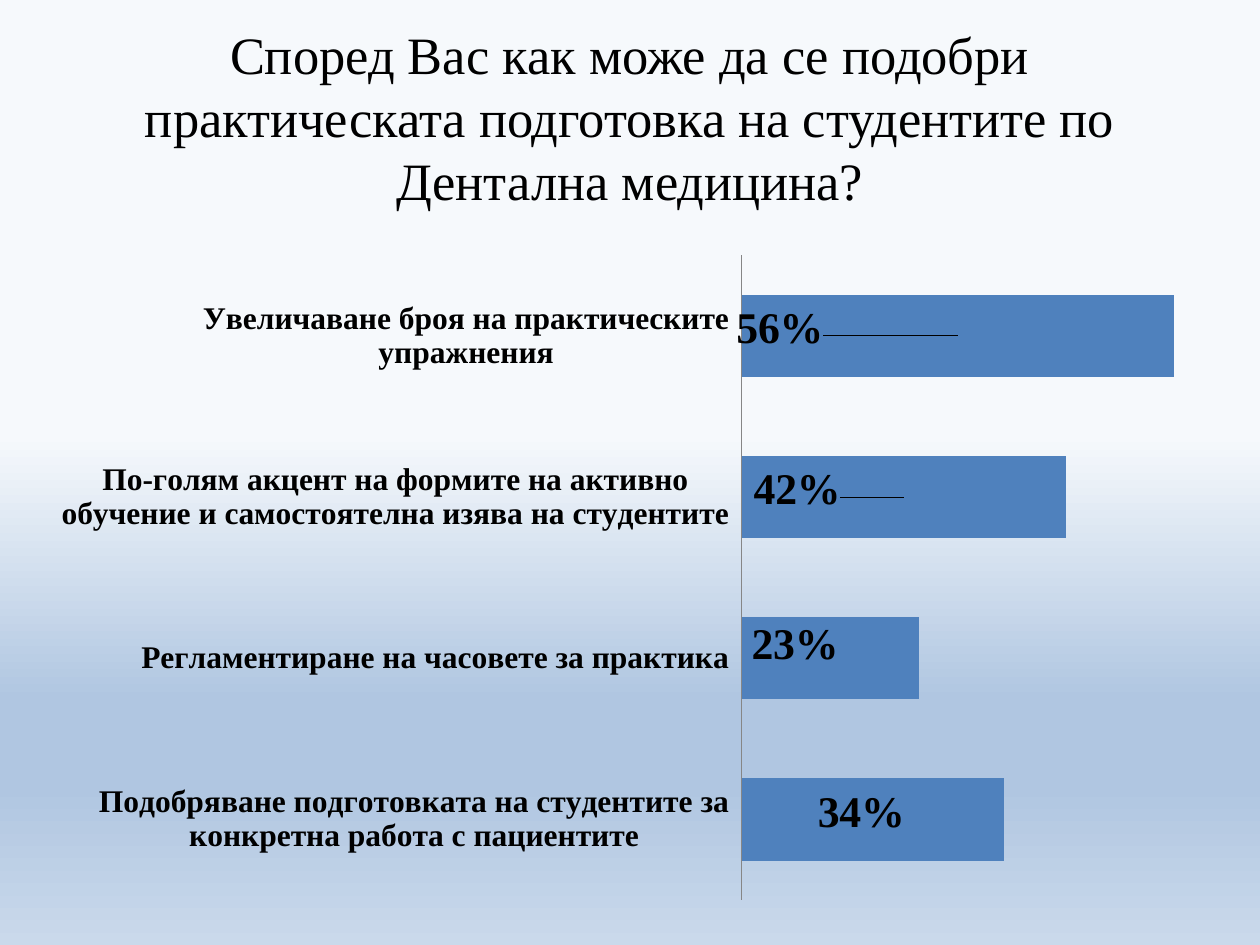
from lxml import etree
from pptx import Presentation
from pptx.chart.data import CategoryChartData
from pptx.dml.color import RGBColor
from pptx.enum.chart import XL_CHART_TYPE, XL_LABEL_POSITION, XL_TICK_LABEL_POSITION, XL_TICK_MARK
from pptx.enum.text import MSO_ANCHOR, PP_ALIGN
from pptx.oxml import parse_xml
from pptx.oxml.ns import nsdecls, qn
from pptx.util import Inches, Pt

BAR_STACKED = XL_CHART_TYPE.BAR_STACKED
LABEL_CENTER = XL_LABEL_POSITION.CENTER
LABELS_LOW = XL_TICK_LABEL_POSITION.LOW
NO_TICK = XL_TICK_MARK.NONE
MIDDLE = MSO_ANCHOR.MIDDLE
CENTER = PP_ALIGN.CENTER

SERIF = "Times New Roman"
BLACK = "000000"
BAR_BLUE = "4F81BD"
AXIS_GRAY = "868686"
SKY_STOPS = [(46, "F6F9FC"), (74, "B0C6E1"), (83, "B0C6E1"), (100, "CAD9EB")]
QUESTION = ("Според Вас как може да се подобри практическата подготовка "
            "на студентите по Дентална медицина?")
ANSWERS = [
    ("Подобряване подготовката на студентите за конкретна работа с пациентите", 0.34, (-0.01, -0.01)),
    ("Регламентиране на часовете за практика", 0.23, (-0.03, -0.02)),
    ("По-голям акцент на формите на активно обучение и самостоятелна изява на студентите",
     0.42, (-0.09, -0.01)),
    ("Увеличаване броя на практическите упражнения", 0.56, (-0.15, -0.01)),
]


def color(hex_value):
    """Turn a hex string into a colour."""
    return RGBColor.from_string(hex_value)


def style_font(font, size, bold, name=SERIF):
    """Set size, weight, typeface and black colour."""
    font.size = Pt(size)
    font.bold = bold
    font.name = name
    font.color.rgb = color(BLACK)


def paint_background(slide):
    """Fill the slide with the vertical sky gradient."""
    slide.background.fill.gradient()
    gradient = slide.background.fill._fill._gradFill
    for child in list(gradient):
        gradient.remove(child)
    stops = etree.SubElement(gradient, qn("a:gsLst"))
    for percent, hex_value in SKY_STOPS:
        stop = etree.SubElement(stops, qn("a:gs"), pos=str(percent * 1000))
        etree.SubElement(stop, qn("a:srgbClr"), val=hex_value)
    etree.SubElement(gradient, qn("a:lin"), ang="5400000", scaled="0")


def write_title(slide):
    """Place the question in the title placeholder."""
    title = slide.shapes.title
    title.left, title.top = Inches(0.5), Inches(0.3)
    title.width, title.height = Inches(9), Inches(1.25)
    frame = title.text_frame
    frame.vertical_anchor = MIDDLE
    paragraph = frame.paragraphs[0]
    paragraph.alignment = CENTER
    run = paragraph.add_run()
    run.text = QUESTION
    style_font(run.font, 30, False)


def manual_layout(target="", **values):
    """Build a chart layout element from fractions of the chart area."""
    inner = f'<c:layoutTarget val="{target}"/><c:xMode val="edge"/><c:yMode val="edge"/>' if target else ""
    parts = "".join(f'<c:{key} val="{value}"/>' for key, value in values.items())
    return parse_xml(f'<c:layout {nsdecls("c")}><c:manualLayout>{inner}{parts}'
                     '</c:manualLayout></c:layout>')


def format_axes(chart):
    """Show bold answers on a thin line and hide the percentage scale."""
    answers = chart.category_axis
    answers.major_tick_mark = answers.minor_tick_mark = NO_TICK
    answers.tick_label_position = LABELS_LOW
    answers.has_major_gridlines = False
    answers.format.line.color.rgb = color(AXIS_GRAY)
    answers.format.line.width = Pt(0.75)
    style_font(answers.tick_labels.font, 18, True)
    scale = chart.value_axis
    scale.minimum_scale, scale.maximum_scale = 0, 0.6
    scale.has_major_gridlines = False
    scale.tick_labels.number_format = "0%"
    scale.tick_labels.number_format_is_linked = False
    scale.visible = False


def label_bars(series):
    """Give each bar its shifted percentage label."""
    labels = series.data_labels
    labels.show_value = True
    labels.number_format = "0%"
    labels.number_format_is_linked = False
    style_font(labels.font, 25, True)
    for index, (_, _, (x, y)) in enumerate(ANSWERS):
        label = series.points[index].data_label
        style_font(label.font, 25, True)
        label.position = LABEL_CENTER
    for element, (_, _, (x, y)) in zip(labels._element.findall(qn("c:dLbl")), ANSWERS):
        element.find(qn("c:idx")).addnext(manual_layout(x=x, y=y))


def add_answer_chart(slide):
    """Add the bar chart of answers."""
    data = CategoryChartData(number_format="0%")
    data.categories = [answer for answer, _, _ in ANSWERS]
    data.add_series("Series 1", [share for _, share, _ in ANSWERS])
    chart = slide.shapes.add_chart(BAR_STACKED, Inches(0.33), Inches(1.92),
                                   Inches(9.42), Inches(5.33), data).chart
    chart.has_title = chart.has_legend = False
    style_font(chart.font, 18, False, "Calibri")
    format_axes(chart)
    plot = chart.plots[0]
    plot.gap_width, plot.overlap = 95, 100
    plot.vary_by_categories = False
    series = plot.series[0]
    series.format.fill.solid()
    series.format.fill.fore_color.rgb = color(BAR_BLUE)
    label_bars(series)
    plot_area = chart._chartSpace.chart.plotArea
    for layout in plot_area.findall(qn("c:layout")):
        plot_area.remove(layout)
    plot_area.insert(0, manual_layout("inner", x=0.59, y=0.02, w=0.39, h=0.96))


def main():
    """Build and save the survey slide."""
    deck = Presentation()
    deck.slide_width, deck.slide_height = Inches(10), Inches(7.5)
    slide = deck.slides.add_slide(deck.slide_layouts[5])
    paint_background(slide)
    write_title(slide)
    add_answer_chart(slide)
    deck.save("out.pptx")


if __name__ == "__main__":
    main()
